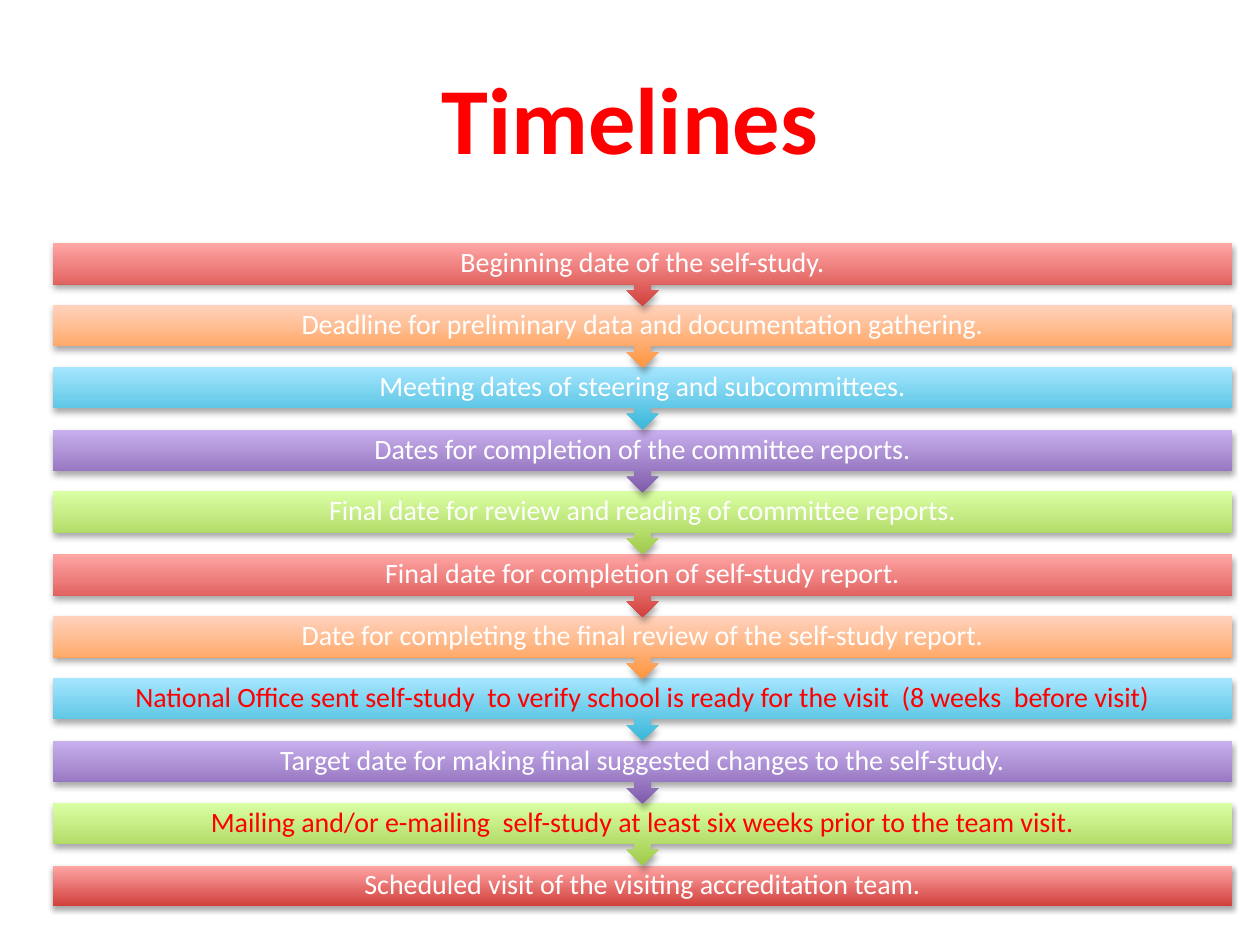
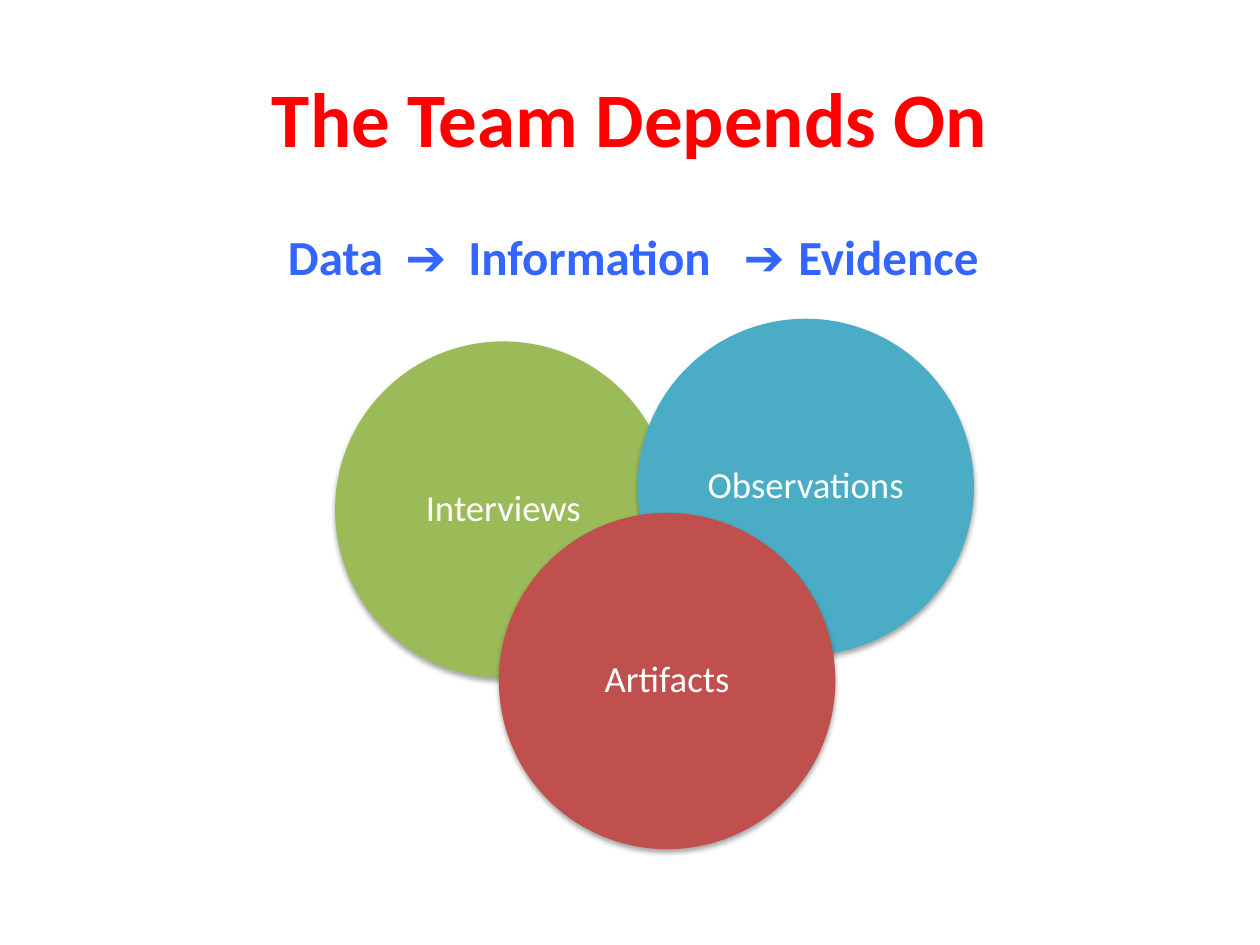
from lxml import etree
from pptx import Presentation
from pptx.dml.color import RGBColor
from pptx.enum.shapes import MSO_SHAPE as SHAPE
from pptx.enum.text import MSO_ANCHOR as ANCHOR, PP_ALIGN as ALIGN
from pptx.oxml import parse_xml
from pptx.oxml.ns import nsdecls, qn

PX = 9144
RED, WHITE, BLUE = "FF0000", "FFFFFF", "3366FF"
SHADOW = (
    f'<a:outerShdw {nsdecls("a")} blurRad="39370" dist="22860" dir="5400000" rotWithShape="0">'
    '<a:srgbClr val="000000"><a:alpha val="35000"/></a:srgbClr></a:outerShdw>'
)


def write(p, text, color, **fmt):
    p.alignment = ALIGN.CENTER
    r = p.add_run()
    r.text = text
    r.font.color.rgb = RGBColor.from_string(color)
    for name, value in {"name": "Calibri", **fmt}.items():
        setattr(r.font, name, value)


def add_block(slide, kind, box, text, color, size, margins):
    sp = slide.shapes.add_shape(kind, *[v * PX for v in box])
    sp.line.fill.background()
    sp.shadow.inherit = False
    sp._element.spPr.find(qn("a:effectLst")).append(parse_xml(SHADOW))
    tf = sp.text_frame
    side, top = [v * PX for v in margins]
    fmt = {"word_wrap": True, "vertical_anchor": ANCHOR.MIDDLE,
           "margin_left": side, "margin_right": side, "margin_top": top, "margin_bottom": top}
    for name, value in fmt.items():
        setattr(tf, name, value)
    p = tf.paragraphs[0]
    p.line_spacing = 0.9
    write(p, text, color, size=size)
    return sp


prs = Presentation()
prs.slide_width, prs.slide_height = 1000 * PX, 750 * PX

slides = []
for layout, title, size in [(5, "Timelines", 54), (1, "The Team Depends On", 44)]:
    s = prs.slides.add_slide(prs.slide_layouts[layout])
    sp = s.shapes.title
    sp.left, sp.top, sp.width, sp.height = [v * PX for v in (50, 30, 900, 125)]
    write(sp.text_frame.paragraphs[0], title, RED, size=size * 12700, bold=True)
    slides.append(s)
timeline, evidence = slides

steps = [
    ("Beginning date of the self-study.", WHITE),
    ("Deadline for preliminary data and documentation gathering.", WHITE),
    ("Meeting dates of steering and subcommittees.", WHITE),
    ("Dates for completion of the committee reports.", WHITE),
    ("Final date for review and reading of committee reports.", WHITE),
    ("Final date for completion of self-study report.", WHITE),
    ("Date for completing the final review of the self-study report.", WHITE),
    ("National Office sent self-study  to verify school is ready for the visit  (8 weeks  before visit)", RED),
    ("Target date for making final suggested changes to the self-study.", WHITE),
    ("Mailing and/or e-mailing  self-study at least six weeks prior to the team visit.", RED),
    ("Scheduled visit of the visiting accreditation team.", WHITE),
]
gradients = [("D1403C", "FFA6A5"), ("FF953E", "FFD2BD"), ("39B7D8", "A7E6FF"),
             ("7F5BAB", "C8B0ED"), ("A0CA4A", "DAFFA5")]
last = len(steps) - 1
for i, (text, color) in reversed(list(enumerate(steps))):
    kind, height = (SHAPE.RECTANGLE, 32) if i == last else (SHAPE.DOWN_ARROW_CALLOUT, 50)
    top = 193 + 494 * i // 10
    sp = add_block(timeline, kind, (42, top, 936, height), text, color, 16 * 12700, (12, 0))
    sp.fill.gradient()
    sp.fill.gradient_angle = 90
    for stop, shade in zip(sp.fill.gradient_stops, gradients[i % len(gradients)]):
        stop.color.rgb = RGBColor.from_string(shade)

body = evidence.placeholders[1]
body.left, body.top, body.width, body.height = [v * PX for v in (50, 175, 900, 495)]
p = body.text_frame.paragraphs[0]
for text, font in [("Data  ", "Calibri"), ("➔", "Arial"), ("  Information   ", "Calibri"),
                   ("➔ ", "Arial"), ("Evidence", "Calibri")]:
    write(p, text, BLUE, name=font, size=28 * 12700, bold=True)
pPr = p._p.get_or_add_pPr()
pPr.set("marL", str(5 * PX))
pPr.set("indent", "0")
etree.SubElement(pPr, qn("a:buNone"))

for text, left, top, shade in [("Interviews", 266, 271, "9BBB59"),
                               ("Observations", 506, 253, "4BACC6"),
                               ("Artifacts", 396, 407, "C0504D")]:
    sp = add_block(evidence, SHAPE.OVAL, (left, top, 267, 267), text, WHITE, 21 * 12700, (15, 3))
    sp.fill.solid()
    sp.fill.fore_color.rgb = RGBColor.from_string(shade)

prs.save("out.pptx")
